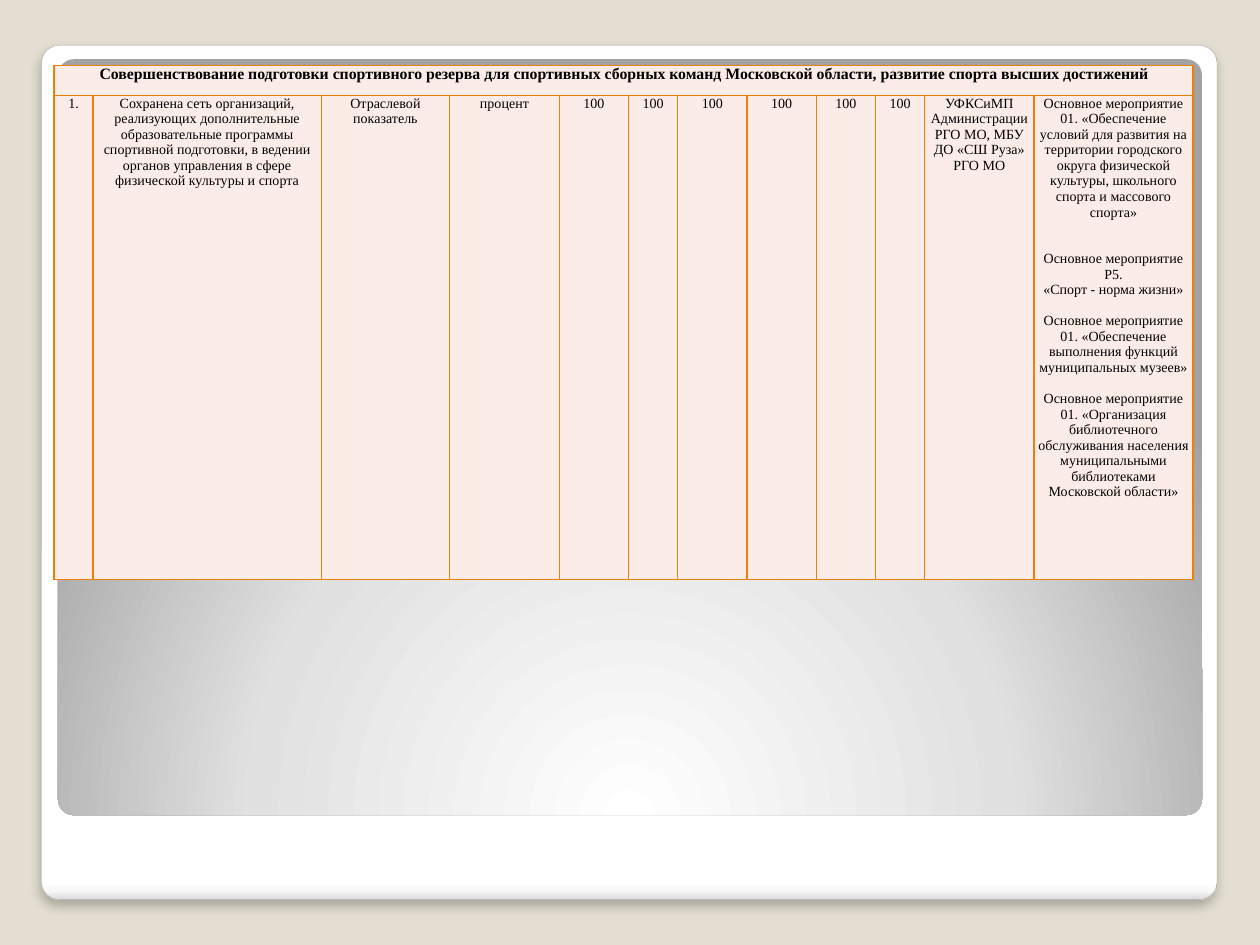
from pptx import Presentation
from pptx.dml.color import RGBColor
from pptx.enum.shapes import MSO_SHAPE as Preset
from pptx.enum.text import PP_ALIGN as Align
from pptx.oxml import parse_xml
from pptx.oxml.ns import nsdecls
from pptx.util import Inches, Pt

SLIDE_W, SLIDE_H = 10, 7.5
FONT = "Times New Roman"
ORANGE, PINK, BLACK = "F07F09", "FCECE7", "000000"
COLUMNS = [0.31, 1.81, 1.02, 0.87, 0.55, 0.39, 0.55, 0.55, 0.47, 0.39, 0.87, 1.26]
ROWS = [0.24, 3.84]
BLANK_LINE = 8.9

HEADING = ("Совершенствование подготовки спортивного резерва для спортивных "
           "сборных команд Московской области, развитие спорта высших достижений")
INDICATOR = ("Сохранена сеть организаций, реализующих дополнительные образовательные "
             "программы спортивной подготовки, в ведении органов управления в сфере "
             "физической культуры и спорта")
RESPONSIBLE = "УФКСиМП Администрации РГО МО, МБУ ДО «СШ Руза» РГО МО"
MEASURES = [
    ("Основное мероприятие 01. «Обеспечение условий для развития на территории "
     "городского округа физической культуры, школьного спорта и массового спорта»", 0),
    ("Основное мероприятие Р5.", 2),
    ("«Спорт - норма жизни»", 0),
    ("Основное мероприятие 01. «Обеспечение выполнения функций "
     "муниципальных музеев»", 1),
    ("Основное мероприятие 01. «Организация библиотечного обслуживания населения "
     "муниципальными библиотеками Московской области»", 1),
]
YEAR_VALUES = ["100"] * 6


def color(value):
    return RGBColor.from_string(value)


def gradient(stops, direction):
    marks = "".join(f'<a:gs pos="{share * 1000}"><a:srgbClr val="{value}"/></a:gs>'
                    for share, value in stops)
    return parse_xml(f'<a:gradFill {nsdecls("a")} rotWithShape="1">'
                     f'<a:gsLst>{marks}</a:gsLst>{direction}</a:gradFill>')


def add_panel(slide, left, top, width, height, stops, direction):
    panel = slide.shapes.add_shape(Preset.ROUNDED_RECTANGLE, Inches(left), Inches(top),
                                   Inches(width), Inches(height))
    panel.adjustments[0] = 0.021
    panel.shadow.inherit = False
    panel.line.fill.background()
    properties = panel.element.spPr
    properties.insert(2, gradient(stops, direction))
    return panel


def add_soft_edge(panel):
    panel.line.color.rgb = color("A4A4A4")
    panel.line.width = Pt(0.16)
    effects = panel.element.spPr.find(
        "{http://schemas.openxmlformats.org/drawingml/2006/main}effectLst")
    effects.append(parse_xml(
        f'<a:outerShdw {nsdecls("a")} blurRad="{Pt(6)}" dist="{Pt(4)}" dir="5400000" '
        f'algn="t" rotWithShape="0"><a:srgbClr val="{BLACK}">'
        '<a:alpha val="25000"/></a:srgbClr></a:outerShdw>'))


def style_cell(cell):
    cell.margin_left = cell.margin_right = Inches(0.03)
    cell.margin_top = cell.margin_bottom = 0
    properties = cell._tc.get_or_add_tcPr()
    for side in ("lnL", "lnR", "lnT", "lnB"):
        properties.append(parse_xml(
            f'<a:{side} {nsdecls("a")} w="{Pt(1)}"><a:solidFill>'
            f'<a:srgbClr val="{ORANGE}"/></a:solidFill></a:{side}>'))
    cell.fill.solid()
    cell.fill.fore_color.rgb = color(PINK)


def write_cell(cell, paragraphs, size=8, bold=False):
    frame = cell.text_frame
    for index, (text, blank_lines) in enumerate(paragraphs):
        paragraph = frame.add_paragraph() if index else frame.paragraphs[0]
        paragraph.text = text
        paragraph.alignment = Align.CENTER
        if blank_lines:
            paragraph.space_before = Pt(blank_lines * BLANK_LINE)
        font = paragraph.runs[0].font
        font.name, font.size, font.bold = FONT, Pt(size), bold
        font.color.rgb = color(BLACK)


def add_indicator_table(slide):
    table = slide.shapes.add_table(len(ROWS), len(COLUMNS), Inches(0.43), Inches(0.52),
                                   Inches(sum(COLUMNS)), Inches(sum(ROWS))).table
    for column, width in zip(table.columns, COLUMNS):
        column.width = Inches(width)
    for row, height in zip(table.rows, ROWS):
        row.height = Inches(height)
    for cell in table.iter_cells():
        style_cell(cell)

    heading = table.cell(0, 0)
    heading.merge(table.cell(0, len(COLUMNS) - 1))
    write_cell(heading, [(HEADING, 0)], size=9, bold=True)

    entries = ["1.", INDICATOR, "Отраслевой показатель", "процент",
               *YEAR_VALUES, RESPONSIBLE]
    contents = [[(entry, 0)] for entry in entries] + [MEASURES]
    for index, paragraphs in enumerate(contents):
        write_cell(table.cell(1, index), paragraphs)


def main():
    deck = Presentation()
    deck.slide_width, deck.slide_height = Inches(SLIDE_W), Inches(SLIDE_H)
    slide = deck.slides.add_slide(deck.slide_layouts[6])
    slide.background.fill.solid()
    slide.background.fill.fore_color.rgb = color("E3DED1")

    frame = add_panel(slide, 0.33, 0.36, 9.33, 6.78,
                      [(0, "FFFFFF"), (98, "FFFFFF"), (99, "F7F7F7"), (100, "DADADA")],
                      '<a:lin ang="5400000" scaled="0"/>')
    add_soft_edge(frame)
    add_panel(slide, 0.46, 0.47, 9.08, 6,
              [(0, "FFFFFF"), (55, "E1E1E1"), (100, "A2A2A2")],
              '<a:path path="circle"><a:fillToRect l="50000" t="175000" '
              'r="50000" b="-75000"/></a:path>')
    add_indicator_table(slide)
    deck.save("out.pptx")


if __name__ == "__main__":
    main()
